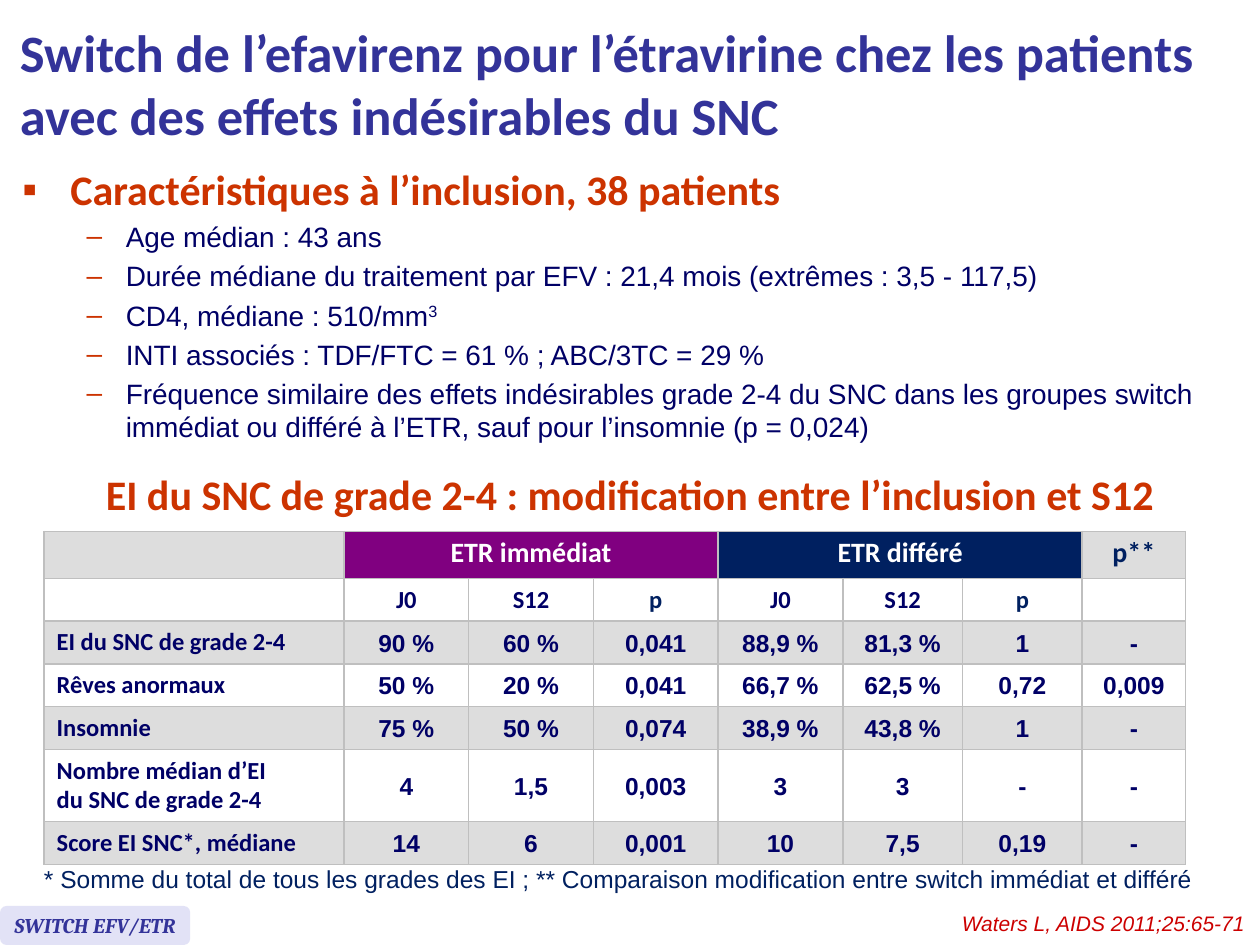
import pptx
import pptx.util
import pptx.dml.color
import pptx.enum.shapes
import pptx.enum.text
import pptx.oxml
import pptx.oxml.ns

Inches, Pt = pptx.util.Inches, pptx.util.Pt
ALIGN, ANCHOR = pptx.enum.text.PP_ALIGN, pptx.enum.text.MSO_ANCHOR
NAVY, DARK, RED, INDIGO = "000066", "002060", "CC3300", "333399"
GREY, WHITE, PURPLE = "DDDDDD", "FFFFFF", "800080"
NS = pptx.oxml.ns.nsdecls("a")


def color(value):
    return pptx.dml.color.RGBColor.from_string(value)


def style(paragraph, size, hex_color, font="Calibri", bold=True, italic=False):
    for run in paragraph.runs:
        run.font.size = Pt(size)
        run.font.name = font
        run.font.bold = bold
        run.font.italic = italic
        run.font.color.rgb = color(hex_color)


deck = pptx.Presentation()
deck.slide_width, deck.slide_height = Inches(10), Inches(7.5)
slide = deck.slides.add_slide(deck.slide_layouts[6])

# Baseline characteristics
characteristics = [
    "Caractéristiques à l’inclusion, 38 patients",
    "Age médian : 43 ans",
    "Durée médiane du traitement par EFV : 21,4 mois (extrêmes : 3,5 - 117,5)",
    "CD4, médiane : 510/mm",
    "INTI associés : TDF/FTC = 61 % ; ABC/3TC = 29 %",
    "Fréquence similaire des effets indésirables grade 2-4 du SNC dans les groupes switch "
    "immédiat ou différé à l’ETR, sauf pour l’insomnie (p = 0,024)",
]
baseline = slide.shapes.add_textbox(Inches(0.08), Inches(1.25), Inches(9.87), Inches(2.67)).text_frame
baseline.word_wrap = True
baseline.text = "\n".join(characteristics)
for index, item in enumerate(baseline.paragraphs):
    is_heading = index == 0
    bullet, margin, hanging = ("▪", 0.38, 0.38) if is_heading else ("–", 0.82, 0.31)
    properties = item._p.get_or_add_pPr()
    properties.set("marL", str(Inches(margin)))
    properties.set("indent", str(-Inches(hanging)))
    for xml in (f'<a:buClr {NS}><a:srgbClr val="{RED}"/></a:buClr>',
                f'<a:buFont {NS} typeface="Arial"/>',
                f'<a:buChar {NS} char="{bullet}"/>'):
        properties.append(pptx.oxml.parse_xml(xml))
    if is_heading:
        style(item, 24, RED)
        continue
    item.level = 1
    item.space_before = Pt(3.2)
    if item.text.endswith("/mm"):
        exponent = item.add_run()
        exponent.text = "3"
        exponent._r.get_or_add_rPr().set("baseline", "30000")
    style(item, 16, NAVY, "Arial", False)

# Adverse event table
events = [
    ["", "ETR immédiat", "", "", "ETR différé", "", "", "p**"],
    ["", "J0", "S12", "p", "J0", "S12", "p", ""],
    ["EI du SNC de grade 2-4", "90 %", "60 %", "0,041", "88,9 %", "81,3 %", "1", "-"],
    ["Rêves anormaux", "50 %", "20 %", "0,041", "66,7 %", "62,5 %", "0,72", "0,009"],
    ["Insomnie", "75 %", "50 %", "0,074", "38,9 %", "43,8 %", "1", "-"],
    ["Nombre médian d’EI\vdu SNC de grade 2-4", "4", "1,5", "0,003", "3", "3", "-", "-"],
    ["Score EI SNC*, médiane", "14", "6", "0,001", "10", "7,5", "0,19", "-"],
]
widths = [2.38, 0.99, 0.99, 0.99, 0.99, 0.95, 0.95, 0.82]
heights = [0.37, 0.34, 0.34, 0.34, 0.34, 0.57, 0.34]
header_fills = [GREY] + [PURPLE] * 3 + [DARK] * 3 + [GREY]
table = slide.shapes.add_table(len(heights), len(widths), Inches(0.35), Inches(4.22),
                               Inches(sum(widths)), Inches(sum(heights))).table
for column, width in zip(table.columns, widths):
    column.width = Inches(width)
for row, height in zip(table.rows, heights):
    row.height = Inches(height)

for r, values in enumerate(events):
    for c, value in enumerate(values):
        cell = table.cell(r, c)
        cell.vertical_anchor = ANCHOR.MIDDLE
        entry = cell.text_frame.paragraphs[0]
        entry.text = value
        entry.line_spacing = Pt(17)
        entry.alignment = ALIGN.CENTER if c or r < 2 else ALIGN.LEFT
        if not value:
            # Small type keeps empty cells from stretching their row
            entry._p.append(pptx.oxml.parse_xml(f'<a:endParaRPr {NS} sz="1200"/>'))
        elif r == 0:
            style(entry, 16, DARK if value == "p**" else WHITE)
        else:
            style(entry, 14, DARK if value == "p" else NAVY, "Arial" if r > 1 and c else "Calibri")
        for side in ("lnL", "lnR", "lnT", "lnB"):
            cell._tc.get_or_add_tcPr().append(pptx.oxml.parse_xml(
                f'<a:{side} {NS} w="12700"><a:solidFill><a:srgbClr val="BFBFBF"/></a:solidFill></a:{side}>'))
        cell.fill.solid()
        row_fill = WHITE if r % 2 else GREY
        cell.fill.fore_color.rgb = color(row_fill if r else header_fills[c])
for first in (1, 4):
    table.cell(0, first).merge(table.cell(0, first + 2))

# Footnote, table heading, reference and title
captions = [
    ("* Somme du total de tous les grades des EI ; ** Comparaison modification entre switch immédiat et différé",
     (0.24, 6.8, 9.34, 0.34), ALIGN.CENTER, False, (14, DARK, "Arial", False)),
    ("EI du SNC de grade 2-4 : modification entre l’inclusion et S12",
     (0.66, 3.67, 8.68, 0.5), ALIGN.CENTER, False, (24, RED)),
    ("Waters L, AIDS 2011;25:65-71",
     (6.48, 7.18, 3.5, 0.3), ALIGN.RIGHT, True, (12, "CC0000", "Arial", False, True)),
    ("Switch de l’efavirenz pour l’étravirine chez les patients avec des effets indésirables du SNC",
     (0.06, 0.05, 9.9, 1.21), ALIGN.LEFT, True, (30, INDIGO)),
]
for text, place, alignment, wrap, look in captions:
    caption = slide.shapes.add_textbox(*map(Inches, place)).text_frame
    caption.word_wrap = wrap
    caption.vertical_anchor = ANCHOR.MIDDLE
    caption.text = text
    caption.paragraphs[0].alignment = alignment
    style(caption.paragraphs[0], *look)

# Study badge
badge = slide.shapes.add_shape(pptx.enum.shapes.MSO_SHAPE.ROUNDED_RECTANGLE,
                               Inches(0), Inches(7.19), Inches(1.51), Inches(0.31))
badge.shadow.inherit = False
badge.fill.solid()
badge.fill.fore_color.rgb = color("E2E2F6")
badge.line.fill.background()
badge.text_frame.word_wrap = False
badge.text_frame.vertical_anchor = ANCHOR.MIDDLE
badge.text_frame.text = "SWITCH EFV/ETR"
badge.text_frame.paragraphs[0].alignment = ALIGN.CENTER
style(badge.text_frame.paragraphs[0], 12, INDIGO, "Cambria", True, True)

deck.save("out.pptx")
